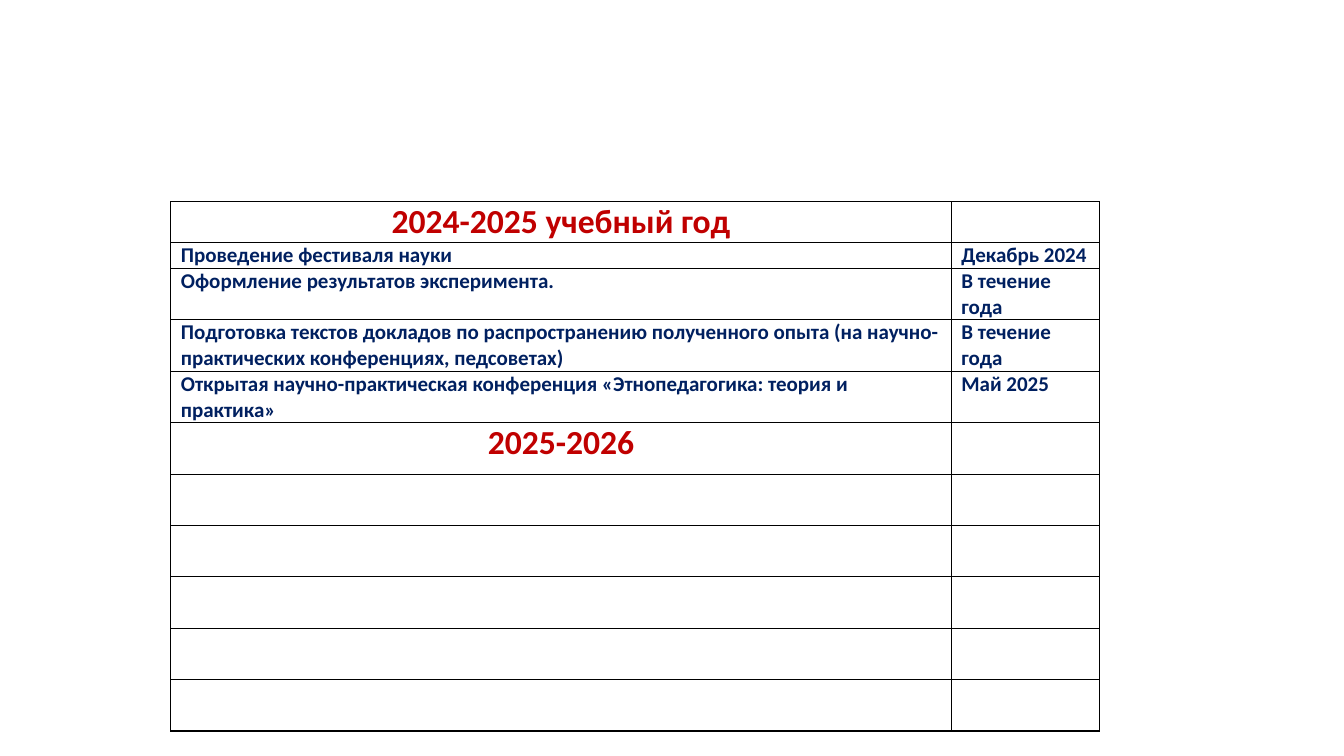
from pptx import Presentation
from pptx.dml.color import RGBColor
from pptx.enum.text import PP_ALIGN as Align
from pptx.oxml import parse_xml
from pptx.oxml.ns import nsdecls
from pptx.util import Pt

COLORS = {"year": "C00000", "event": "002060", "border": "000000"}
STYLES = {
    "year": {"size": Pt(24), "align": Align.CENTER},
    "event": {"size": Pt(15), "align": Align.LEFT},
}
PLAN = [
    ("year", "2024-2025 учебный год", ""),
    ("event", "Проведение фестиваля науки", "Декабрь 2024"),
    ("event", "Оформление результатов эксперимента.", "В течение года"),
    ("event", "Подготовка текстов докладов по распространению полученного опыта "
              "(на научно-практических конференциях, педсоветах)", "В течение года"),
    ("event", "Открытая научно-практическая конференция "
              "«Этнопедагогика: теория и практика»", "Май 2025"),
    ("year", "2025-2026", ""),
] + [("event", "", "")] * 5
COLUMN_WIDTHS = [557.5, 106]
ROW_HEIGHTS = [29.3, 18.4] + [36.7] * 9


def add_borders(cell):
    properties = cell._tc.get_or_add_tcPr()
    for side in ("lnL", "lnR", "lnT", "lnB"):
        properties.append(parse_xml(
            f'<a:{side} {nsdecls("a")} w="{Pt(1)}"><a:solidFill>'
            f'<a:srgbClr val="{COLORS["border"]}"/></a:solidFill></a:{side}>'))


prs = Presentation()
prs.slide_width, prs.slide_height = Pt(960), Pt(540)
slide = prs.slides.add_slide(prs.slide_layouts[6])

schedule = slide.shapes.add_table(
    len(PLAN), len(COLUMN_WIDTHS), Pt(122), Pt(144),
    Pt(sum(COLUMN_WIDTHS)), Pt(sum(ROW_HEIGHTS))).table
schedule.first_row = schedule.horz_banding = False
for column, width in zip(schedule.columns, COLUMN_WIDTHS):
    column.width = Pt(width)

for row, height, (kind, event, date) in zip(schedule.rows, ROW_HEIGHTS, PLAN):
    row.height = Pt(height)
    for cell, text in zip(row.cells, (event, date)):
        cell.margin_left = cell.margin_right = Pt(7.2)
        cell.margin_top = cell.margin_bottom = 0
        add_borders(cell)
        cell.fill.background()
        cell.text = text
        paragraph = cell.text_frame.paragraphs[0]
        paragraph.alignment = STYLES[kind]["align"]
        for run in paragraph.runs:
            font_values = {"name": "Calibri", "bold": True, "size": STYLES[kind]["size"]}
            for attribute, value in font_values.items():
                setattr(run.font, attribute, value)
            run.font.color.rgb = RGBColor.from_string(COLORS[kind])

prs.save("out.pptx")
